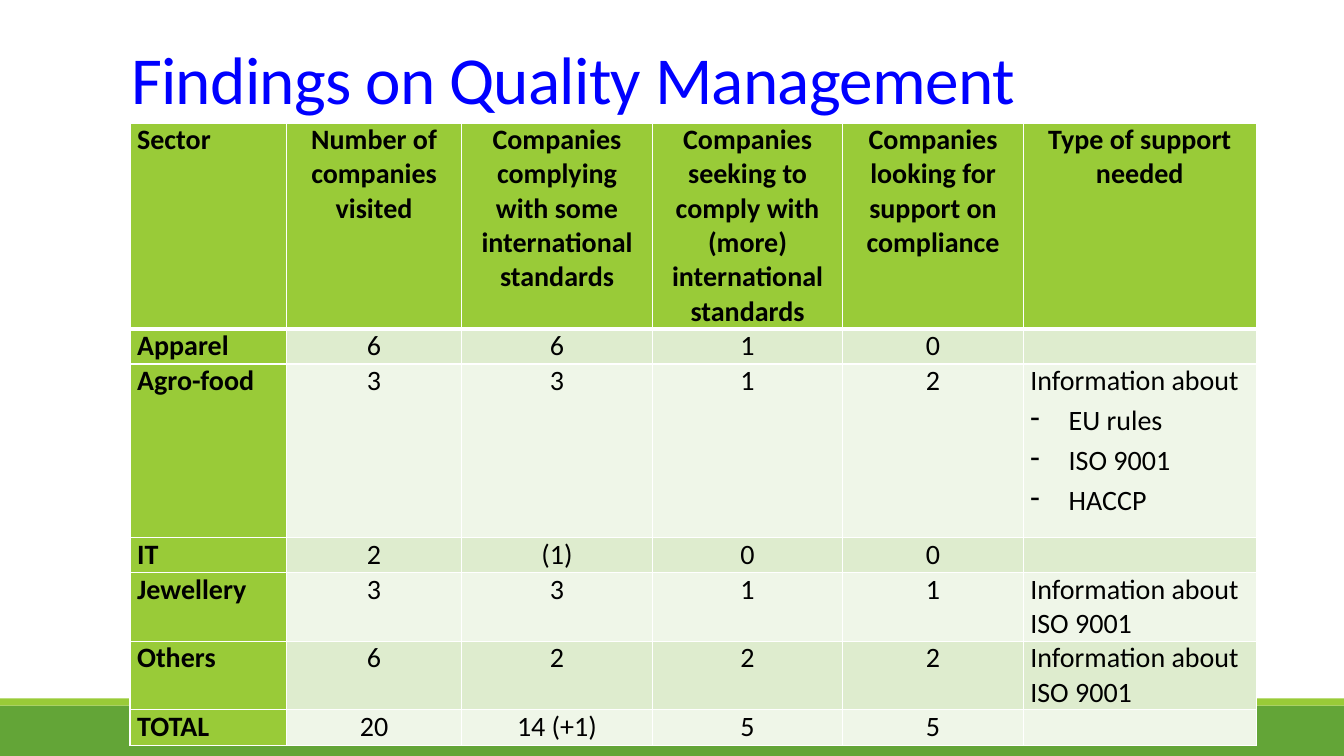
import lxml.etree
import pptx
import pptx.dml.color
import pptx.enum.shapes
import pptx.enum.text
import pptx.oxml.ns
import pptx.util

Inches = pptx.util.Inches
Pt = pptx.util.Pt
RGBColor = pptx.dml.color.RGBColor
ALIGN = pptx.enum.text.PP_ALIGN

BLUE = RGBColor(0x00, 0x00, 0xFF)
BLACK = RGBColor(0x00, 0x00, 0x00)
WHITE = RGBColor(0xFF, 0xFF, 0xFF)
LIME = RGBColor(0x99, 0xCB, 0x38)
GREEN = RGBColor(0x63, 0xA5, 0x37)
BANDS = (RGBColor(0xDE, 0xEC, 0xCE), RGBColor(0xEF, 0xF6, 0xE8))
FONT = "Calibri"

COLUMN_WIDTHS = (1.55, 1.74, 1.89, 1.89, 1.79, 2.31)
ROW_HEIGHTS = (1.8, 0.35, 1.72, 0.35, 0.6, 0.6, 0.35)
SUPPORT_COLUMN = 5
FINDINGS = (
    ("Sector", "Number of companies visited",
     "Companies complying with some international standards",
     "Companies seeking to comply with (more) international standards",
     "Companies looking for support on compliance", "Type of support needed"),
    ("Apparel", "6", "6", "1", "0", ""),
    ("Agro-food", "3", "3", "1", "2",
     "Information about\nEU rules\nISO 9001\nHACCP"),
    ("IT", "2", "(1)", "0", "0", ""),
    ("Jewellery", "3", "3", "1", "1", "Information about ISO 9001"),
    ("Others", "6", "2", "2", "2", "Information about ISO 9001"),
    ("TOTAL", "20", "14 (+1)", "5", "5", ""),
)


def add_footer_band(slide, top, height, color):
    band = slide.shapes.add_shape(
        pptx.enum.shapes.MSO_SHAPE.RECTANGLE,
        0, Inches(top), Inches(13.33), Inches(height))
    band.shadow.inherit = False
    band.fill.solid()
    band.fill.fore_color.rgb = color
    band.line.fill.background()


def format_run(run, size, color, bold=False):
    run.font.name = FONT
    run.font.size = Pt(size)
    run.font.color.rgb = color
    run.font.bold = bold


def set_title(slide, text):
    title = slide.shapes.title
    title.left, title.top = Inches(1.2), Inches(0.31)
    title.width, title.height = Inches(11), Inches(0.91)
    frame = title.text_frame
    frame.text = text
    frame.auto_size = pptx.enum.text.MSO_AUTO_SIZE.NONE
    frame.vertical_anchor = pptx.enum.text.MSO_ANCHOR.BOTTOM
    heading = frame.paragraphs[0]
    heading.alignment = ALIGN.LEFT
    heading.line_spacing = 0.85
    run = heading.runs[0]
    format_run(run, 48, BLUE)
    run.font._element.set("spc", "-50")


def add_dash(paragraph):
    properties = paragraph._p.get_or_add_pPr()
    properties.set("marL", str(Inches(0.38)))
    properties.set("indent", str(-Inches(0.38)))
    bullet = lxml.etree.SubElement(properties, pptx.oxml.ns.qn("a:buChar"))
    bullet.set("char", "-")


def add_borders(cell, widths):
    """Draw white borders, given as points for left, right, top and bottom."""
    properties = cell._tc.get_or_add_tcPr()
    for place, (side, width) in enumerate(zip("LRTB", widths)):
        border = lxml.etree.Element(pptx.oxml.ns.qn("a:ln" + side))
        border.set("w", str(Pt(width)))
        fill = lxml.etree.SubElement(border, pptx.oxml.ns.qn("a:solidFill"))
        color = lxml.etree.SubElement(fill, pptx.oxml.ns.qn("a:srgbClr"))
        color.set("val", str(WHITE))
        properties.insert(place, border)


def cell_alignment(row, column):
    if column == 0:
        return ALIGN.JUSTIFY if row else ALIGN.LEFT
    if column == SUPPORT_COLUMN and row:
        return ALIGN.LEFT
    return ALIGN.CENTER


def fill_cell(cell, row, column, text):
    is_heading = row == 0 or column == 0
    cell.margin_left = cell.margin_right = Inches(0.07)
    cell.margin_top = cell.margin_bottom = 0
    cell.fill.solid()
    cell.fill.fore_color.rgb = LIME if is_heading else BANDS[(row - 1) % 2]
    add_borders(cell, (1, 1, 3 if row == 1 else 1, 3 if row == 0 else 1))
    cell.text_frame.text = text
    for index, paragraph in enumerate(cell.text_frame.paragraphs):
        paragraph.alignment = cell_alignment(row, column)
        paragraph.space_before = paragraph.space_after = Pt(2)
        if index:
            add_dash(paragraph)
        for run in paragraph.runs:
            format_run(run, 20, BLACK, is_heading)


def add_findings_table(slide):
    table = slide.shapes.add_table(
        len(ROW_HEIGHTS), len(COLUMN_WIDTHS), Inches(1.29), Inches(1.22),
        Inches(sum(COLUMN_WIDTHS)), Inches(sum(ROW_HEIGHTS))).table
    table.first_col = True
    for column, width in zip(table.columns, COLUMN_WIDTHS):
        column.width = Inches(width)
    for row, height in zip(table.rows, ROW_HEIGHTS):
        row.height = Inches(height)
    for row, texts in enumerate(FINDINGS):
        for column, text in enumerate(texts):
            fill_cell(table.cell(row, column), row, column, text)


def main():
    presentation = pptx.Presentation()
    presentation.slide_width = Inches(13.33)
    presentation.slide_height = Inches(7.5)
    slide = presentation.slides.add_slide(presentation.slide_layouts[5])
    add_footer_band(slide, 7, 0.5, GREEN)
    add_footer_band(slide, 6.93, 0.07, LIME)
    set_title(slide, "Findings on Quality Management")
    add_findings_table(slide)
    presentation.save("out.pptx")


if __name__ == "__main__":
    main()
